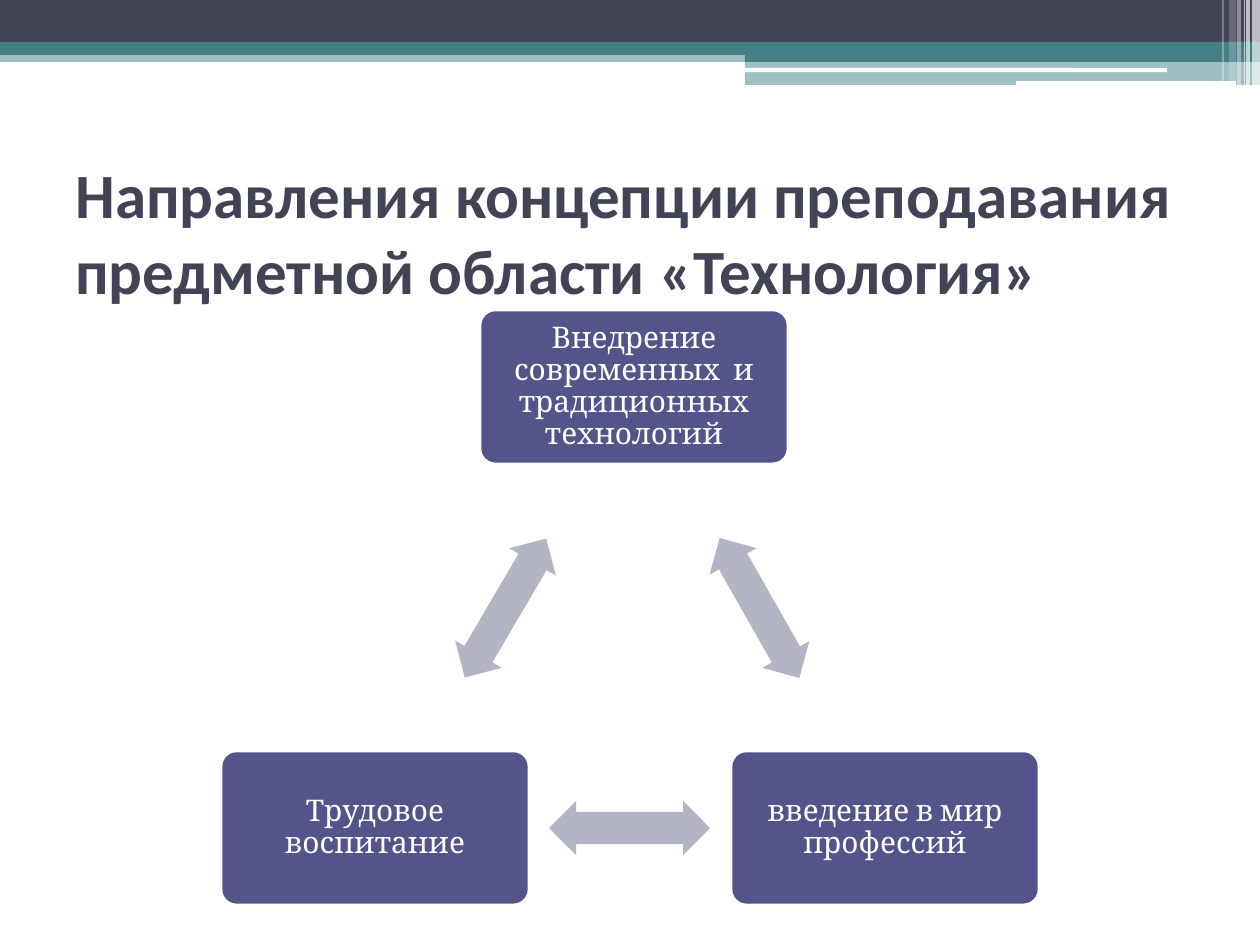
"""Builds a slide on the three directions of the technology teaching concept."""
from lxml.etree import SubElement
from pptx import Presentation
from pptx.dml.color import RGBColor
from pptx.enum.shapes import MSO_SHAPE as Shape
from pptx.enum.text import MSO_ANCHOR as Anchor, PP_ALIGN as Align
from pptx.oxml.ns import qn
from pptx.util import Pt

EMU_PER_PX = 914400 / 126
NAVY = RGBColor(0x42, 0x44, 0x56)
TEAL = RGBColor(0x43, 0x80, 0x86)
INDIGO = RGBColor(0x53, 0x54, 0x8A)
LAVENDER = RGBColor(0xB3, 0xB4, 0xC4)
WHITE = RGBColor(0xFF, 0xFF, 0xFF)


def px(length):
    """Turn pixels into EMU."""
    return round(length * EMU_PER_PX)


def write(frame, text, *, font, size, color, bold=False, align=Align.LEFT, spacing=1.0, inset=None):
    """Put one formatted, vertically centred paragraph into a text frame."""
    frame.word_wrap = True
    frame.vertical_anchor = Anchor.MIDDLE
    if inset is not None:
        frame.margin_left = frame.margin_right = px(inset)
        frame.margin_top = frame.margin_bottom = px(inset)
    paragraph = frame.paragraphs[0]
    paragraph.alignment = align
    paragraph.line_spacing = spacing
    run = paragraph.add_run()
    run.text = text
    run.font.name = font
    run.font.size = Pt(size)
    run.font.bold = bold
    run.font.color.rgb = color


class SlideBuilder:
    """Holds the style and the current slide."""

    heading_style = dict(font="Calibri", size=36, color=NAVY, bold=True)
    node_style = dict(font="Cambria", size=17, color=WHITE, align=Align.CENTER, spacing=0.9, inset=9)
    node_size = (308, 154)
    arrow_size = (161, 54)

    def __init__(self, slide):
        self.slide = slide

    def block(self, kind, left, top, width, height, color, opacity=100, adjustments=()):
        """Add a filled preset shape without outline or shadow."""
        block = self.slide.shapes.add_shape(kind, px(left), px(top), px(width), px(height))
        block.shadow.inherit = False
        block.fill.solid()
        block.fill.fore_color.rgb = color
        block.line.fill.background()
        for index, value in enumerate(adjustments):
            block.adjustments[index] = value
        if opacity < 100:
            tint = block.fill._xPr.find(qn("a:solidFill"))[0]
            SubElement(tint, qn("a:alpha")).set("val", str(opacity * 1000))
        return block

    def heading(self, left, top, width, height, text):
        """Add the slide heading."""
        box = self.slide.shapes.add_textbox(px(left), px(top), px(width), px(height))
        write(box.text_frame, text, **self.heading_style)

    def node(self, left, top, text):
        """Add a rounded node of the cycle."""
        node = self.block(Shape.ROUNDED_RECTANGLE, left, top, *self.node_size, INDIGO, adjustments=[0.1])
        node.line.color.rgb = WHITE
        node.line.width = Pt(1.5)
        write(node.text_frame, text, **self.node_style)

    def arrow(self, left, top, rotation):
        """Add a two-headed arrow between nodes."""
        arrow = self.block(Shape.LEFT_RIGHT_ARROW, left, top, *self.arrow_size, LAVENDER, adjustments=[0.6, 0.5])
        arrow.rotation = rotation


def main():
    """Build and save the slide."""
    deck = Presentation()
    deck.slide_width, deck.slide_height = px(1260), px(945)
    builder = SlideBuilder(deck.slides.add_slide(deck.slide_layouts[6]))

    for left, top, width, height, color, opacity in [
        (0, 50, 1260, 12, TEAL, 50),
        (0, 0, 1260, 43, NAVY, 100),
        (0, 42, 1260, 13, TEAL, 100),
        (745, 49, 515, 13, TEAL, 100),
        (745, 61, 515, 24, TEAL, 50),
    ]:
        builder.block(Shape.RECTANGLE, left, top, width, height, color, opacity)
    for left, top, width, height in [(745, 68, 422, 4), (1016, 81, 220, 5)]:
        builder.block(Shape.ROUNDED_RECTANGLE, left, top, width, height, WHITE)
    for left, width, height, opacity in [
        (1252, 8, 85, 65),
        (1246, 4, 85, 65),
        (1244, 1, 85, 60),
        (1237, 4, 85, 40),
        (1229, 7, 81, 20),
        (1222, 2, 81, 30),
    ]:
        builder.block(Shape.RECTANGLE, left, 0, width, height, WHITE, opacity)

    builder.heading(63, 158, 1134, 147, "Направления концепции преподавания предметной области «Технология»")
    for left, top, direction in [
        (480, 310, "Внедрение современных  и традиционных технологий"),
        (731, 751, "введение в мир профессий"),
        (221, 751, "Трудовое воспитание"),
    ]:
        builder.node(left, top, direction)
    for left, top, rotation in [(679, 581, 60.4), (549, 801, 180), (425, 581, 300.4)]:
        builder.arrow(left, top, rotation)

    deck.save("out.pptx")


if __name__ == "__main__":
    main()
